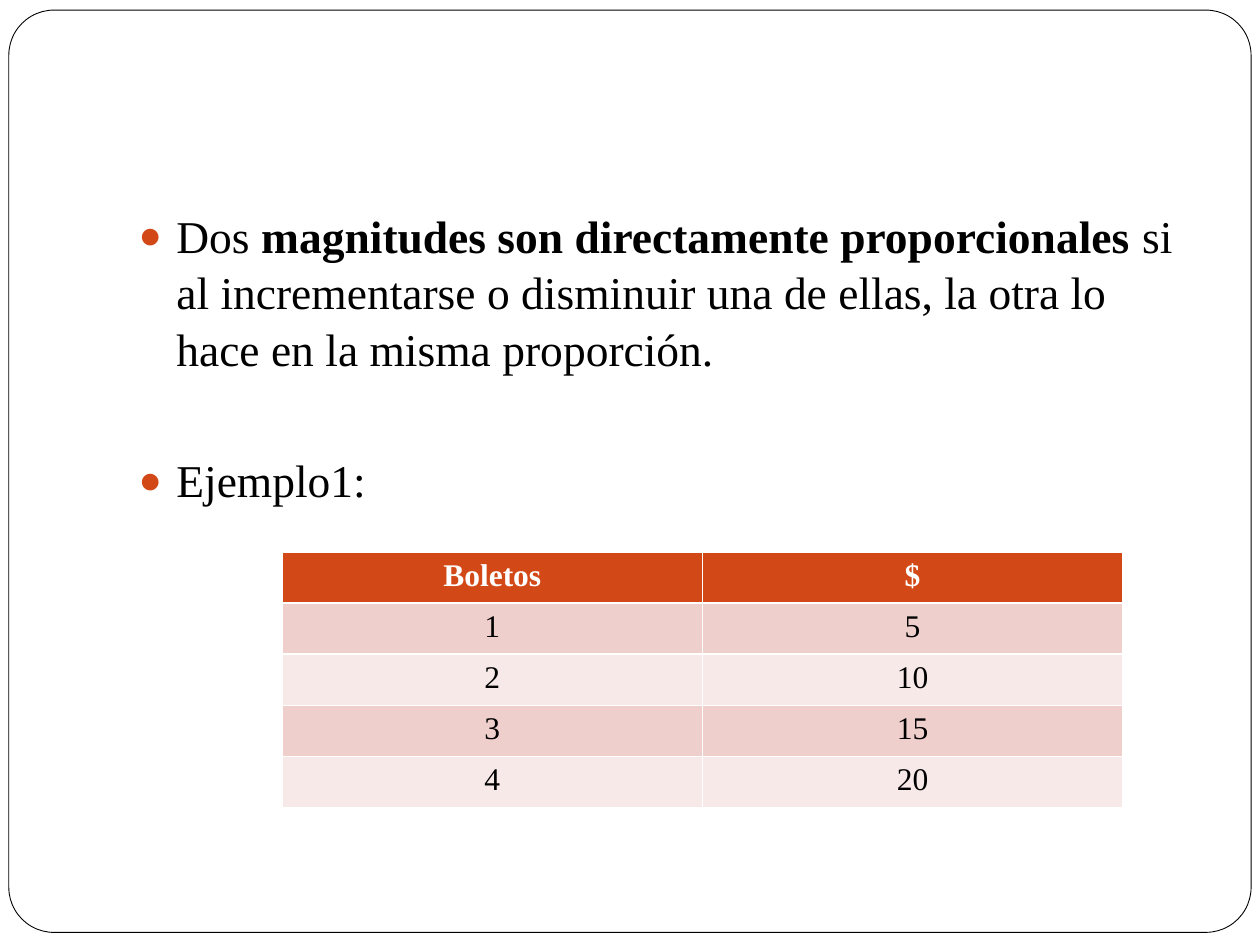
import lxml.etree
import pptx
import pptx.dml.color
import pptx.enum.shapes
import pptx.enum.text
import pptx.oxml.ns
import pptx.util

Inches = pptx.util.Inches
Pt = pptx.util.Pt

COLORS = {
    "white": "FFFFFF",
    "black": "000000",
    "accent": "D34817",
    "band_dark": "EFCFCC",
    "band_light": "F7E9E8",
}
DEFINITION = [
    ("Dos ", False),
    ("magnitudes son directamente proporcionales", True),
    (" si al incrementarse o disminuir una de ellas, la otra lo hace en la misma proporción.", False),
]
EXAMPLE = [("Ejemplo1:", False)]
TICKET_PRICES = [("Boletos", "$"), ("1", "5"), ("2", "10"), ("3", "15"), ("4", "20")]


def rgb(name):
    return pptx.dml.color.RGBColor.from_string(COLORS[name])


class SlideBuilder:
    font_name = "Times New Roman"
    body_size = Pt(26)
    table_size = Pt(18)

    def __init__(self, presentation):
        self.slide = presentation.slides.add_slide(presentation.slide_layouts[1])
        title = self.slide.shapes.title
        title.element.getparent().remove(title.element)

    def frame(self, left, top, width, height):
        """Draw the rounded page border behind everything else."""
        shapes = self.slide.shapes
        shape = shapes.add_shape(
            pptx.enum.shapes.MSO_SHAPE.ROUNDED_RECTANGLE, left, top, width, height)
        shape.adjustments[0] = 0.049
        shape.shadow.inherit = False
        shape.fill.solid()
        shape.fill.fore_color.rgb = rgb("white")
        shape.line.color.rgb = rgb("black")
        shape.line.width = Pt(0.5)
        shapes[0].element.addprevious(shape.element)

    def add_run(self, paragraph, text, size, color="black", bold=False):
        run = paragraph.add_run()
        run.text = text
        values = {"name": self.font_name, "size": size, "bold": bold}
        for attribute, value in values.items():
            setattr(run.font, attribute, value)
        run.font.color.rgb = rgb(color)

    def add_bullet(self, paragraph):
        properties = paragraph._p.get_or_add_pPr()
        properties.set("marL", str(Inches(0.3)))
        properties.set("indent", str(Inches(-0.3)))
        qn = pptx.oxml.ns.qn
        color = lxml.etree.SubElement(properties, qn("a:buClr"))
        lxml.etree.SubElement(color, qn("a:srgbClr"), val=COLORS["accent"])
        lxml.etree.SubElement(properties, qn("a:buSzPct"), val="85000")
        lxml.etree.SubElement(properties, qn("a:buChar"), char="●")

    def bullet_list(self, items, left, top, width, height):
        """Fill the body with (runs, space before) items."""
        body = self.slide.placeholders[1]
        values = {"left": left, "top": top, "width": width, "height": height}
        for attribute, value in values.items():
            setattr(body, attribute, value)
        text_frame = body.text_frame
        text_frame.auto_size = pptx.enum.text.MSO_AUTO_SIZE.NONE
        for index, (runs, space_before) in enumerate(items):
            paragraph = text_frame.add_paragraph() if index else text_frame.paragraphs[0]
            paragraph.space_before = space_before
            paragraph.line_spacing = 1.04
            self.add_bullet(paragraph)
            for text, bold in runs:
                self.add_run(paragraph, text, self.body_size, bold=bold)

    def table(self, rows, left, top, width, height):
        table = self.slide.shapes.add_table(
            len(rows), len(rows[0]), left, top, width, height).table
        for row_index, row in enumerate(rows):
            header = row_index == 0
            fill = "accent" if header else ("band_light", "band_dark")[row_index % 2]
            for column_index, text in enumerate(row):
                cell = table.cell(row_index, column_index)
                cell.fill.solid()
                cell.fill.fore_color.rgb = rgb(fill)
                paragraph = cell.text_frame.paragraphs[0]
                paragraph.alignment = pptx.enum.text.PP_ALIGN.CENTER
                self.add_run(paragraph, text, self.table_size,
                             "white" if header else "black", header)


def main():
    presentation = pptx.Presentation()
    presentation.slide_width = Inches(10)
    presentation.slide_height = Inches(7.5)
    builder = SlideBuilder(presentation)
    builder.frame(Inches(0.07), Inches(0.08), Inches(9.86), Inches(7.32))
    builder.bullet_list([(DEFINITION, Pt(5.8)), (EXAMPLE, Pt(42.7))],
                        Inches(1), Inches(1.58), Inches(8.5), Inches(5))
    builder.table(TICKET_PRICES, Inches(2.24), Inches(4.38), Inches(6.67), Inches(2.03))
    presentation.save("out.pptx")


if __name__ == "__main__":
    main()
